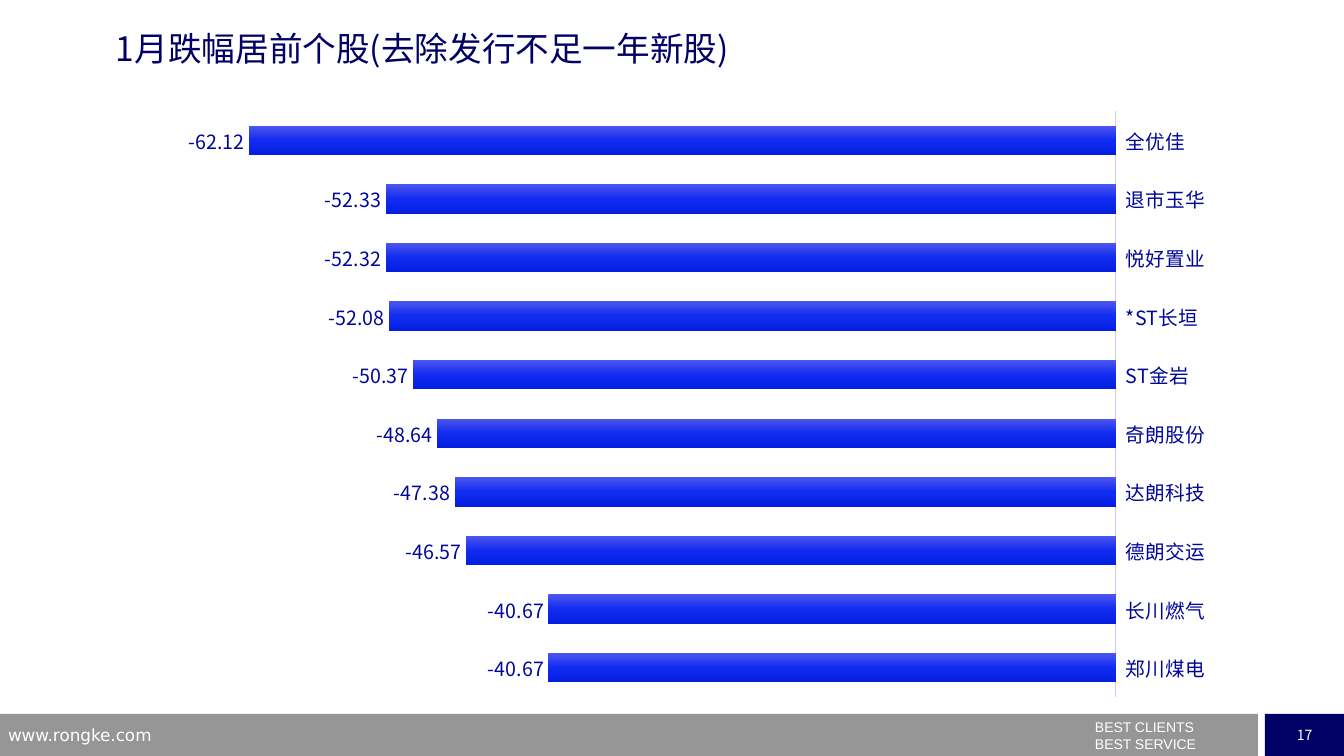
from copy import deepcopy
from dataclasses import dataclass

from lxml import etree
from pptx import Presentation
from pptx.chart.data import CategoryChartData
from pptx.dml.color import RGBColor
from pptx.enum.chart import XL_CHART_TYPE, XL_LABEL_POSITION, XL_TICK_LABEL_POSITION, XL_TICK_MARK
from pptx.enum.shapes import MSO_SHAPE
from pptx.enum.text import MSO_ANCHOR, PP_ALIGN
from pptx.oxml import parse_xml
from pptx.oxml.ns import nsdecls, qn
from pptx.util import Emu, Pt

BAR = XL_CHART_TYPE.BAR_CLUSTERED
OUTSIDE_END = XL_LABEL_POSITION.OUTSIDE_END
LABELS_HIGH = XL_TICK_LABEL_POSITION.HIGH
NO_TICK = XL_TICK_MARK.NONE
RECTANGLE = MSO_SHAPE.RECTANGLE
MIDDLE, TOP = MSO_ANCHOR.MIDDLE, MSO_ANCHOR.TOP
LEFT, CENTER = PP_ALIGN.LEFT, PP_ALIGN.CENTER

EMU_PER_PX = 914400 / 100.8


@dataclass(frozen=True)
class Theme:
    navy: str = "000066"
    grey: str = "969696"
    white: str = "FFFFFF"
    label: str = "000798"
    axis: str = "C9CCFF"
    bar_stops: tuple[tuple[float, str], ...] = ((0, "4E57EC"), (0.5, "112BF1"), (1, "041EE2"))
    cjk: str = "Noto Sans CJK SC"
    title_size: int = 24
    chart_size: int = 14
    site_size: int = 12
    small_size: int = 10


THEME = Theme()


@dataclass(frozen=True)
class Area:
    left: int
    top: int
    width: int
    height: int

    def emu(self) -> list[Emu]:
        return [px(n) for n in (self.left, self.top, self.width, self.height)]


@dataclass(frozen=True)
class Band:
    area: Area
    color: str


@dataclass(frozen=True)
class Label:
    area: Area
    lines: tuple[str, ...]
    size: int
    font: str
    color: str = THEME.white
    align: PP_ALIGN = LEFT
    anchor: MSO_ANCHOR = TOP
    wrap: bool = True
    inset: tuple[int, int] = (10, 5)
    line_spacing: float = 1.0
    gap: int = 0


@dataclass(frozen=True)
class Stock:
    name: str
    change: float


NUMBER_AREA = Area(1265, 714, 79, 42)
BANDS = (Band(Area(0, 714, 1258, 42), THEME.grey), Band(NUMBER_AREA, THEME.navy))
LABELS = (
    Label(NUMBER_AREA, ("17",), THEME.small_size, THEME.cjk, align=CENTER, anchor=MIDDLE, wrap=False),
    Label(Area(1085, 721, 258, 36), ("BEST CLIENTS", "BEST SERVICE"), THEME.small_size, "Arial",
          line_spacing=0.5, gap=6),
    Label(Area(-2, 720, 325, 26), ("www.rongke.com",), THEME.site_size, "DejaVu Sans"),
    Label(Area(116, 28, 907, 58), ("1月跌幅居前个股(去除发行不足一年新股)",), THEME.title_size,
          THEME.cjk, THEME.navy, inset=(0, 0)),
)

CHART_AREA = Area(116, 99, 1111, 610)
PLOT_AREA = Area(139, 111, 977, 586)
NUMBER_FORMAT = "###,###,###,##0.00"
STOCKS = (
    Stock("郑川煤电", -40.67),
    Stock("长川燃气", -40.67),
    Stock("德朗交运", -46.57),
    Stock("达朗科技", -47.38),
    Stock("奇朗股份", -48.64),
    Stock("ST金岩", -50.37),
    Stock("*ST长垣", -52.08),
    Stock("悦好置业", -52.32),
    Stock("退市玉华", -52.33),
    Stock("全优佳", -62.12),
)


def px(length: int) -> Emu:
    return Emu(round(length * EMU_PER_PX))


def apply(target, values: dict) -> None:
    for name, value in values.items():
        setattr(target, name, value)


def style_font(font, size: int, name: str, color: str) -> None:
    apply(font, {"size": Pt(size), "name": name, "bold": False})
    font.color.rgb = RGBColor.from_string(color)


def add_east_asian_fonts(root) -> None:
    for latin in list(root.iter(qn("a:latin"))):
        east_asian = etree.Element(qn("a:ea"), typeface=latin.get("typeface"))
        latin.addnext(east_asian)


def draw_band(page, band: Band) -> None:
    shape = page.shapes.add_shape(RECTANGLE, *band.area.emu())
    shape.shadow.inherit = False
    shape.fill.solid()
    shape.fill.fore_color.rgb = RGBColor.from_string(band.color)
    shape.line.fill.background()


def draw_label(page, label: Label) -> None:
    frame = page.shapes.add_textbox(*label.area.emu()).text_frame
    side, edge = (px(n) for n in label.inset)
    apply(frame, {"word_wrap": label.wrap, "vertical_anchor": label.anchor,
                  "margin_left": side, "margin_right": side,
                  "margin_top": edge, "margin_bottom": edge})
    for index, line in enumerate(label.lines):
        para = frame.add_paragraph() if index else frame.paragraphs[0]
        apply(para, {"alignment": label.align, "line_spacing": label.line_spacing})
        if index:
            para.space_before = Pt(label.gap)
        span = para.add_run()
        span.text = line
        style_font(span.font, label.size, label.font, label.color)


def fill_bars(series) -> None:
    fill = series.format.fill
    fill.gradient()
    fill.gradient_angle = 270
    stop_list = next(series.format.fill.gradient_stops[0]._gs.iterancestors(qn("a:gsLst")))
    stop_list.insert(1, deepcopy(stop_list[0]))
    for stop, (position, color) in zip(fill.gradient_stops, THEME.bar_stops):
        stop.position = position
        stop.color.rgb = RGBColor.from_string(color)


def place_plot(chart) -> None:
    shares = {
        "x": (PLOT_AREA.left - CHART_AREA.left) / CHART_AREA.width,
        "y": (PLOT_AREA.top - CHART_AREA.top) / CHART_AREA.height,
        "w": PLOT_AREA.width / CHART_AREA.width,
        "h": PLOT_AREA.height / CHART_AREA.height,
    }
    values = "".join(f'<c:{key} val="{share:.4f}"/>' for key, share in shares.items())
    layout = parse_xml(
        f'<c:layout {nsdecls("c")}><c:manualLayout><c:layoutTarget val="inner"/>'
        f'<c:xMode val="edge"/><c:yMode val="edge"/>{values}</c:manualLayout></c:layout>')
    plot_area = chart._chartSpace.chart.plotArea
    for old in plot_area.findall(qn("c:layout")):
        plot_area.remove(old)
    plot_area.insert(0, layout)


def draw_chart(page) -> None:
    data = CategoryChartData(number_format=NUMBER_FORMAT)
    data.categories = [stock.name for stock in STOCKS]
    data.add_series("Series 1", [stock.change for stock in STOCKS])
    chart = page.shapes.add_chart(BAR, *CHART_AREA.emu(), data).chart
    apply(chart, {"has_legend": False, "has_title": False})
    text_style = (THEME.chart_size, THEME.cjk, THEME.label)
    style_font(chart.font, *text_style)

    # Axes
    apply(chart.value_axis, {"minimum_scale": -70, "maximum_scale": 0,
                             "has_major_gridlines": False, "visible": False})
    names = chart.category_axis
    apply(names, {"major_tick_mark": NO_TICK, "minor_tick_mark": NO_TICK,
                  "tick_label_position": LABELS_HIGH, "has_major_gridlines": False})
    names.format.line.width = Pt(0.75)
    names.format.line.color.rgb = RGBColor.from_string(THEME.axis)
    style_font(names.tick_labels.font, *text_style)

    # Bars and their values
    plot = chart.plots[0]
    apply(plot, {"gap_width": 100, "vary_by_categories": False, "has_data_labels": True})
    apply(plot.data_labels, {"show_value": True, "position": OUTSIDE_END,
                             "number_format": NUMBER_FORMAT, "number_format_is_linked": False})
    style_font(plot.data_labels.font, *text_style)
    plot.series[0].invert_if_negative = False
    fill_bars(plot.series[0])
    place_plot(chart)
    add_east_asian_fonts(chart._chartSpace)


def main() -> None:
    deck = Presentation()
    apply(deck, {"slide_width": px(1344), "slide_height": px(756)})
    page = deck.slides.add_slide(deck.slide_layouts[6])
    for band in BANDS:
        draw_band(page, band)
    for label in LABELS:
        draw_label(page, label)
    add_east_asian_fonts(page.shapes._spTree)
    draw_chart(page)
    deck.save("out.pptx")


if __name__ == "__main__":
    main()
